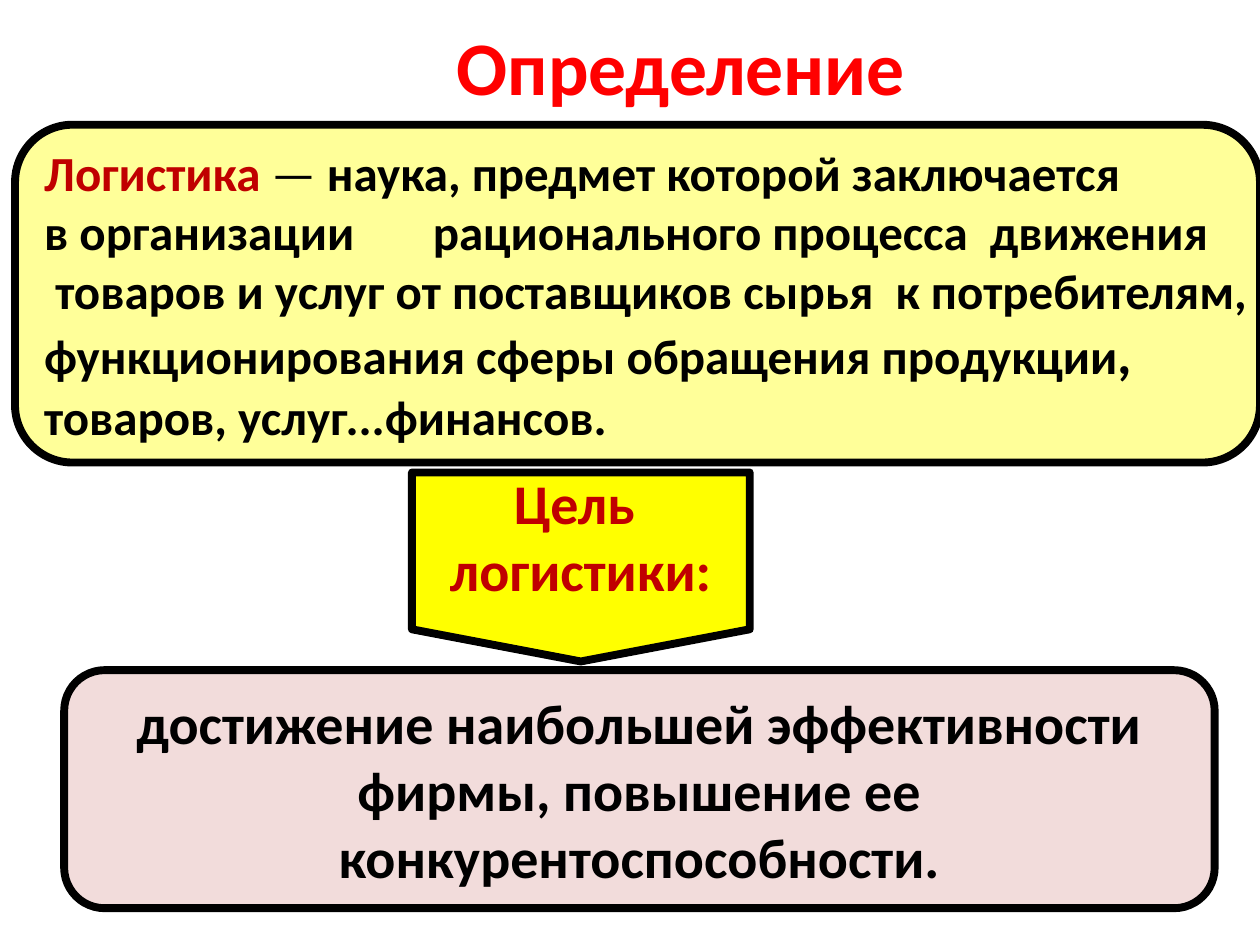
"""Build a slide defining logistics and stating its goal."""
from dataclasses import dataclass

import pptx
import pptx.dml.color
import pptx.enum.shapes
import pptx.enum.text
import pptx.oxml
import pptx.oxml.ns
import pptx.util

Pt = pptx.util.Pt
RGBColor = pptx.dml.color.RGBColor
Shape = pptx.enum.shapes.MSO_SHAPE
Align = pptx.enum.text.PP_ALIGN
Anchor = pptx.enum.text.MSO_ANCHOR

BLACK = RGBColor(0x00, 0x00, 0x00)
RED = RGBColor(0xFF, 0x00, 0x00)
DARK_RED = RGBColor(0xC0, 0x00, 0x00)
CREAM = RGBColor(0xFF, 0xFF, 0x99)
YELLOW = RGBColor(0xFF, 0xFF, 0x00)
PINK = RGBColor(0xF2, 0xDC, 0xDB)


@dataclass
class Span:
    text: str
    size: float
    color: RGBColor = BLACK
    bold: bool = True


@dataclass
class Block:
    kind: Shape
    bounds: tuple[float, float, float, float]
    fill: RGBColor
    adjustments: tuple[float, ...]
    align: Align
    lines: list[list[Span]]


BLOCKS = [
    Block(
        Shape.ROUNDED_RECTANGLE, (8.6, 71.3, 711.4, 193), CREAM, (0.17,), Align.LEFT,
        [
            [
                Span("Логистика", 28, DARK_RED),
                Span(" — ", 28, bold=False),
                Span("наука, предмет которой заключается", 28),
            ],
            [Span("в организации\tрационального процесса  движения", 28)],
            [Span(" товаров и услуг от поставщиков сырья  к потребителям,", 28)],
            [Span("функционирования сферы обращения продукции", 28), Span(",", 32)],
            [Span("товаров, услуг...финансов.", 28)],
        ],
    ),
    Block(
        Shape.DOWN_ARROW_CALLOUT, (235.4, 270, 193, 108), YELLOW,
        (2.04, 1.16, 0.17, 0.67), Align.CENTER,
        [[Span("Цель ", 32, DARK_RED)], [Span("логистики:", 32, DARK_RED)]],
    ),
    Block(
        Shape.ROUNDED_RECTANGLE, (36.7, 383, 657.4, 136), PINK, (0.17,), Align.CENTER,
        [
            [Span("достижение наибольшей эффективности", 32)],
            [Span(" фирмы, повышение ее ", 32)],
            [Span("конкурентоспособности.", 32)],
        ],
    ),
]


def apply(target, values: dict) -> None:
    for name, value in values.items():
        setattr(target, name, value)


def add_span(para, span: Span) -> None:
    run = para.add_run()
    run.text = span.text
    apply(run.font, {"name": "Calibri", "size": Pt(span.size), "bold": span.bold})
    run.font.color.rgb = span.color


def add_tab_stop(para, position: float) -> None:
    properties = para._p.get_or_add_pPr()
    stops = pptx.oxml.parse_xml(
        f'<a:tabLst {pptx.oxml.ns.nsdecls("a")}>'
        f'<a:tab pos="{Pt(position)}" algn="l"/></a:tabLst>'
    )
    properties.append(stops)


def add_block(page, block: Block) -> None:
    box = page.shapes.add_shape(block.kind, *map(Pt, block.bounds))
    box.shadow.inherit = False
    for index, value in enumerate(block.adjustments):
        box.adjustments[index] = value
    box.fill.solid()
    box.fill.fore_color.rgb = block.fill
    box.line.color.rgb = BLACK
    box.line.width = Pt(4.5)
    frame = box.text_frame
    apply(frame, {"word_wrap": False, "vertical_anchor": Anchor.MIDDLE})
    for index, line in enumerate(block.lines):
        para = frame.add_paragraph() if index else frame.paragraphs[0]
        para.alignment = block.align
        for span in line:
            add_span(para, span)
        if any("\t" in span.text for span in line):
            add_tab_stop(para, 222)


def format_title(title) -> None:
    apply(title, {"left": Pt(0), "top": Pt(0), "width": Pt(720), "height": Pt(65.5)})
    frame = title.text_frame
    apply(frame, {
        "auto_size": pptx.enum.text.MSO_AUTO_SIZE.NONE,
        "vertical_anchor": Anchor.MIDDLE,
        "margin_left": Pt(65.5),
        "margin_top": Pt(13),
    })
    para = frame.paragraphs[0]
    para.alignment = Align.CENTER
    add_span(para, Span("Определение", 43.2, RED))


def main() -> None:
    deck = pptx.Presentation()
    apply(deck, {"slide_width": Pt(720), "slide_height": Pt(540)})
    page = deck.slides.add_slide(deck.slide_layouts[5])
    format_title(page.shapes.title)
    for block in BLOCKS:
        add_block(page, block)
    deck.save("out.pptx")


if __name__ == "__main__":
    main()
